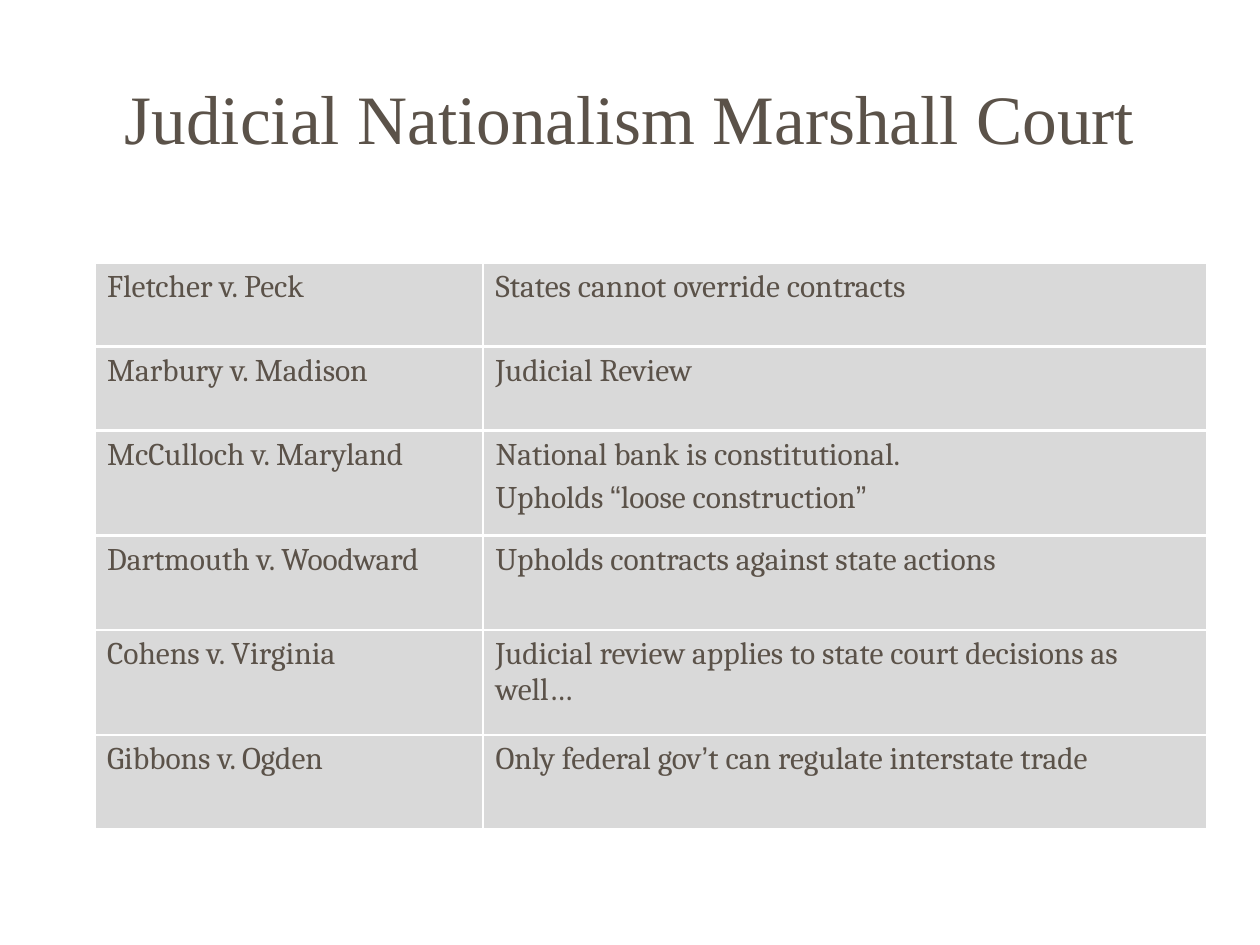
"""Build a slide with a table of Marshall Court cases and their rulings."""
from itertools import groupby

from lxml import etree
from pptx import Presentation
from pptx.dml.color import RGBColor
from pptx.enum import text
from pptx.oxml import ns
from pptx.util import Pt

BROWN = RGBColor(0x5B, 0x52, 0x49)
GREY = RGBColor(0xD9, 0xD9, 0xD9)
WHITE = RGBColor(0xFF, 0xFF, 0xFF)
QUOTES = "“”’"
WIDTHS = 222, 414
CASES = [
    (48, "Fletcher v. Peck", ["States cannot override contracts"]),
    (48, "Marbury v. Madison", ["Judicial Review"]),
    (60, "McCulloch v. Maryland",
     ["National bank is constitutional.", "Upholds “loose construction”"]),
    (54, "Dartmouth v. Woodward", ["Upholds contracts against state actions"]),
    (60, "Cohens v. Virginia",
     ["Judicial review applies to state court decisions as well…"]),
    (54, "Gibbons v. Ogden",
     ["Only federal gov’t can regulate interstate trade"]),
]


def style(para, size, face):
    """Set the font of a paragraph."""
    font = para.font
    font.size, font.name = Pt(size), face
    font.color.rgb = BROWN


def add_title(slide, words):
    """Add the centred heading."""
    box = slide.shapes.add_textbox(Pt(36), Pt(21.6), Pt(648), Pt(90))
    frame = box.text_frame
    frame.word_wrap = True
    frame.vertical_anchor = text.MSO_ANCHOR.MIDDLE
    para = frame.paragraphs[0]
    para.text = words
    para.alignment = text.PP_ALIGN.CENTER
    style(para, 39.6, "Times New Roman")


def add_edges(cell):
    """Draw white lines on all four sides of a cell."""
    props = cell._tc.get_or_add_tcPr()
    for spot, side in enumerate(("lnL", "lnR", "lnT", "lnB")):
        line = etree.Element(ns.qn(f"a:{side}"), w=str(Pt(1.5)))
        fill = etree.SubElement(line, ns.qn("a:solidFill"))
        etree.SubElement(fill, ns.qn("a:srgbClr"), val=str(WHITE))
        props.insert(spot, line)


def fill_cell(cell, lines):
    """Write lines into a cell, with quote marks in their own font."""
    cell.fill.solid()
    cell.fill.fore_color.rgb = GREY
    add_edges(cell)
    frame = cell.text_frame
    for spot, line in enumerate(lines):
        para = frame.add_paragraph() if spot else frame.paragraphs[0]
        para.space_before = Pt(3.6)
        style(para, 18, "Cambria")
        for quote, chars in groupby(line, lambda char: char in QUOTES):
            run = para.add_run()
            run.text = "".join(chars)
            if quote:
                run.font.name = "Arial"


def add_cases(slide):
    """Add the table of cases and rulings."""
    high = sum(case[0] for case in CASES)
    table = slide.shapes.add_table(len(CASES), len(WIDTHS), Pt(54), Pt(150),
                                   Pt(sum(WIDTHS)), Pt(high)).table
    table.first_row = table.horz_banding = False
    for col, width in zip(table.columns, WIDTHS):
        col.width = Pt(width)
    for row, (height, name, ruling) in zip(table.rows, CASES):
        row.height = Pt(height)
        for cell, lines in zip(row.cells, ([name], ruling)):
            fill_cell(cell, lines)


def main():
    """Build and save the slide."""
    deck = Presentation()
    deck.slide_width, deck.slide_height = Pt(720), Pt(540)
    slide = deck.slides.add_slide(deck.slide_layouts[6])
    add_title(slide, "Judicial Nationalism Marshall Court")
    add_cases(slide)
    deck.save("out.pptx")


if __name__ == "__main__":
    main()
